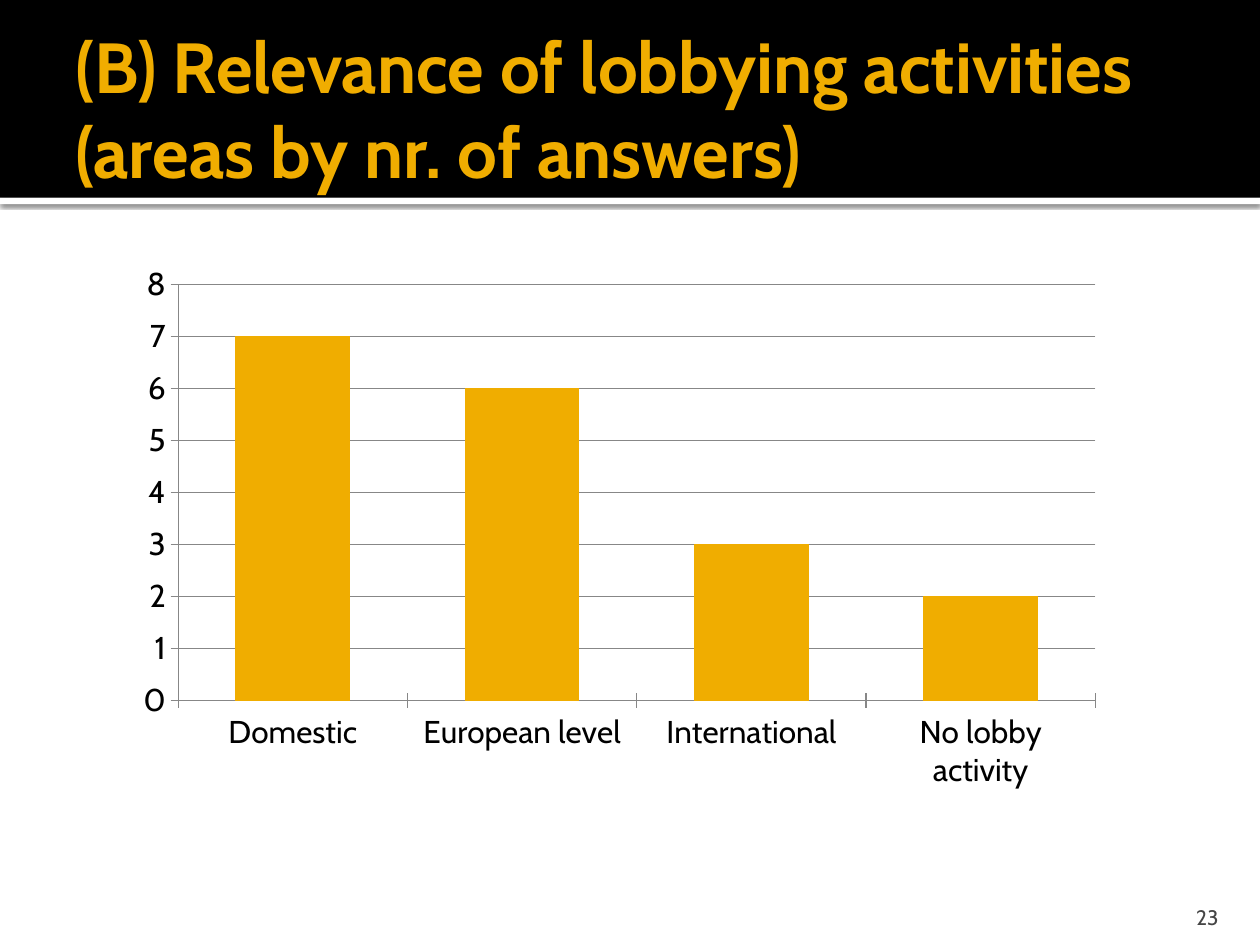
from lxml import etree
from pptx import Presentation
from pptx.chart.data import CategoryChartData
from pptx.dml.color import RGBColor
from pptx.enum.chart import XL_CHART_TYPE, XL_TICK_MARK
from pptx.enum.shapes import MSO_SHAPE
from pptx.enum.text import MSO_ANCHOR, MSO_AUTO_SIZE, PP_ALIGN
from pptx.oxml import parse_xml
from pptx.oxml.ns import nsdecls
from pptx.util import Inches, Pt

WIDTH, HEIGHT = 10, 7.5
FONT = "Cabin"
GOLD, BLACK, WHITE, GRAY, LINE_GRAY = "F0AD00", "000000", "FFFFFF", "454545", "878787"
HEADER_HEIGHT = 1.57
ANSWERS = {"Domestic": 7, "European level": 6, "International": 3, "No lobby activity": 2}


def color(hex_value):
    return RGBColor.from_string(hex_value)


def box(left, top, width, height):
    return [Inches(length) for length in (left, top, width, height)]


def style_font(font, size, hex_value, bold=False):
    font.name = FONT
    font.size = Pt(size)
    font.bold = bold
    font.color.rgb = color(hex_value)


def add_band(slide, top, height, fill):
    band = slide.shapes.add_shape(MSO_SHAPE.RECTANGLE, *box(0, top, WIDTH, height))
    band.shadow.inherit = False
    band.fill.solid()
    band.fill.fore_color.rgb = color(fill)
    band.line.fill.background()
    # Bands lie behind the title
    slide.shapes.title.element.addprevious(band.element)
    return band


def add_drop_shadow(shape):
    effects = shape.element.spPr.find("{*}effectLst")
    effects.append(parse_xml(
        f'<a:outerShdw {nsdecls("a")} blurRad="{Pt(2.5)}" dist="{Pt(0.8)}" dir="5400000">'
        f'<a:srgbClr val="{BLACK}"><a:alpha val="60000"/></a:srgbClr></a:outerShdw>'))


def write_text(shape, text, size, hex_value, anchor, align, insets, bold=False):
    frame = shape.text_frame
    frame.word_wrap = True
    frame.auto_size = MSO_AUTO_SIZE.NONE
    frame.vertical_anchor = anchor
    (frame.margin_left, frame.margin_top,
     frame.margin_right, frame.margin_bottom) = box(*insets)
    paragraph = frame.paragraphs[0]
    paragraph.alignment = align
    run = paragraph.add_run()
    run.text = text
    style_font(run.font, size, hex_value, bold)


def set_title(slide, text):
    title = slide.shapes.title
    title.left, title.top, title.width, title.height = box(0.5, 0.17, 0.9 * WIDTH, 1.37)
    write_text(title, text, 40.5, GOLD, MSO_ANCHOR.MIDDLE, PP_ALIGN.LEFT,
               (0.1, 0.05, 0.05, 0.05), bold=True)


def add_page_number(slide, number):
    page_number = slide.shapes.add_textbox(*box(8.97, 7.08, 0.8, 0.3))
    write_text(page_number, number, 12, GRAY, MSO_ANCHOR.BOTTOM, PP_ALIGN.RIGHT,
               (0.1, 0.05, 0.1, 0))


def add_answers_chart(slide, answers):
    data = CategoryChartData()
    data.categories = list(answers)
    data.add_series("Series 1", list(answers.values()))
    chart = slide.shapes.add_chart(
        XL_CHART_TYPE.COLUMN_CLUSTERED, *box(0.98, 2.02, 7.87, 4.33), data).chart
    chart.has_title = False
    chart.has_legend = False
    style_font(chart.font, 18, BLACK)

    # Columns
    plot = chart.plots[0]
    plot.gap_width = 100
    plot.vary_by_categories = False
    columns = plot.series[0].format.fill
    columns.solid()
    columns.fore_color.rgb = color(GOLD)

    # Axes and gridlines
    value_axis = chart.value_axis
    value_axis.minimum_scale, value_axis.maximum_scale, value_axis.major_unit = 0, 8, 1
    value_axis.has_major_gridlines = True
    for axis in (chart.category_axis, value_axis):
        axis.major_tick_mark = XL_TICK_MARK.CROSS
        axis.minor_tick_mark = XL_TICK_MARK.NONE
    for part in (chart.category_axis, value_axis, value_axis.major_gridlines):
        part.format.line.color.rgb = color(LINE_GRAY)
        part.format.line.width = Pt(0.75)


def main():
    presentation = Presentation()
    presentation.slide_width, presentation.slide_height = Inches(WIDTH), Inches(HEIGHT)
    slide = presentation.slides.add_slide(presentation.slide_layouts.get_by_name("Title Only"))

    # Header
    add_drop_shadow(add_band(slide, HEADER_HEIGHT, 0.05, WHITE))
    add_band(slide, 0, HEADER_HEIGHT, BLACK)
    set_title(slide, "(B) Relevance of lobbying activities (areas by nr. of answers)")

    # Body and footer
    add_page_number(slide, "23")
    add_answers_chart(slide, ANSWERS)
    presentation.save("out.pptx")


if __name__ == "__main__":
    main()
